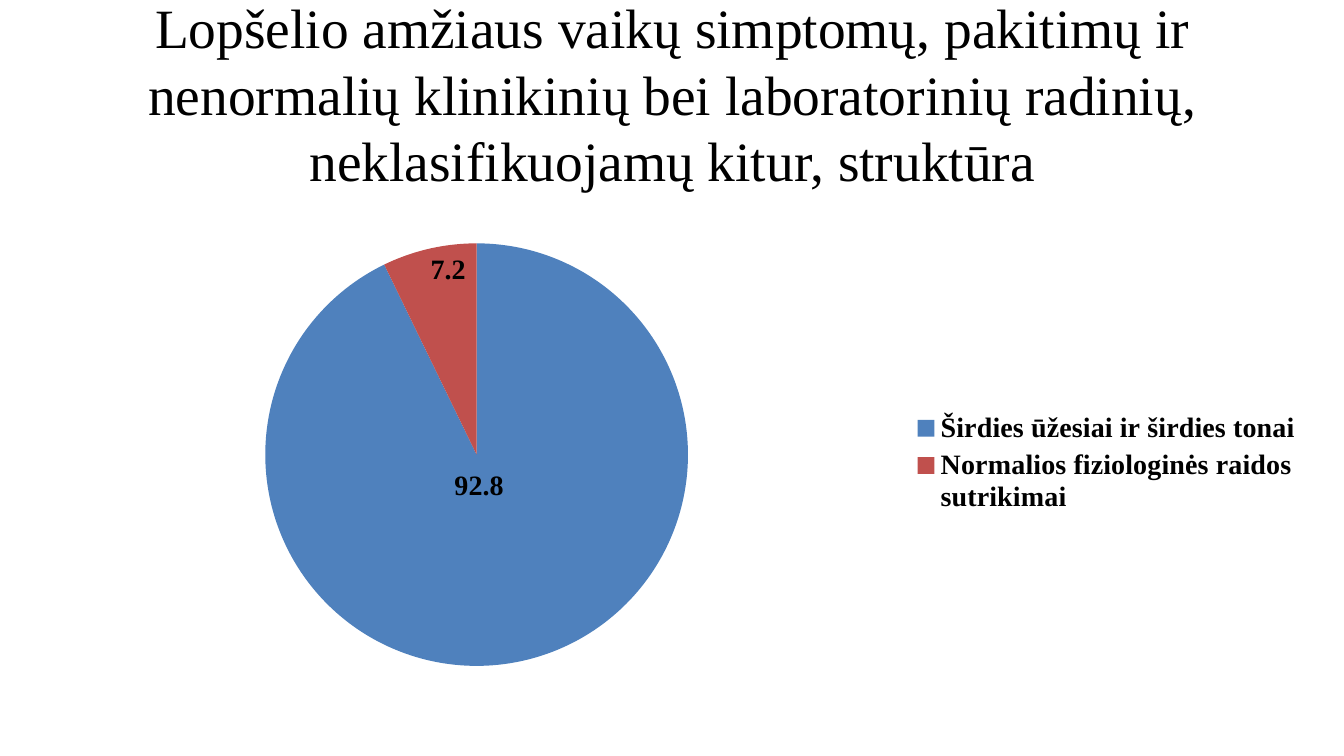
from dataclasses import dataclass

from lxml.etree import SubElement
from pptx import Presentation
from pptx.chart.data import CategoryChartData
from pptx.dml.color import RGBColor
from pptx.enum.chart import XL_CHART_TYPE as ChartType
from pptx.enum.chart import XL_LABEL_POSITION as LabelPos
from pptx.enum.chart import XL_LEGEND_POSITION as LegendPos
from pptx.enum.text import MSO_ANCHOR, MSO_AUTO_SIZE, PP_ALIGN
from pptx.oxml.ns import qn
from pptx.util import Inches, Pt

COLORS = {"text": "000000", "murmurs": "4F81BD", "development": "C0504D"}
SERIF = "Times New Roman"
TITLE = (
    "Lopšelio amžiaus vaikų simptomų, pakitimų ir nenormalių klinikinių "
    "bei laboratorinių radinių, neklasifikuojamų kitur, struktūra"
)


@dataclass
class Slice:
    name: str
    value: float
    color: str


SLICES = [
    Slice("Širdies ūžesiai ir širdies tonai", 92.8, "murmurs"),
    Slice("Normalios fiziologinės raidos sutrikimai", 7.2, "development"),
]


def rgb(name: str) -> RGBColor:
    return RGBColor.from_string(COLORS[name])


def style_font(font, size: float, name: str = SERIF, bold: bool = False) -> None:
    font.name = name
    font.size = Pt(size)
    font.bold = bold
    font.color.rgb = rgb("text")


def set_layout(layout, **settings) -> None:
    for child in list(layout):
        layout.remove(child)
    manual = SubElement(layout, qn("c:manualLayout"))
    for tag, value in settings.items():
        SubElement(manual, qn(f"c:{tag}")).set("val", str(value))


def add_title(s) -> None:
    sp = s.shapes.title
    sp.left, sp.top = Inches(0.67), Inches(0.3)
    sp.width, sp.height = Inches(12), Inches(1.25)
    tf = sp.text_frame
    tf.text = TITLE
    tf.word_wrap = True
    tf.auto_size = MSO_AUTO_SIZE.NONE
    tf.vertical_anchor = MSO_ANCHOR.MIDDLE
    p = tf.paragraphs[0]
    p.alignment = PP_ALIGN.CENTER
    style_font(p.runs[0].font, 39.6)


def add_pie(s) -> None:
    data = CategoryChartData()
    data.categories = [item.name for item in SLICES]
    data.add_series("Series 1", [item.value for item in SLICES])
    chart = s.shapes.add_chart(
        ChartType.PIE, Inches(0.67), Inches(1.95), Inches(12.35), Inches(5.28), data
    ).chart
    style_font(chart.font, 18, "Calibri")
    chart.has_title = False
    chart.has_legend = True
    chart.legend.position = LegendPos.RIGHT
    chart.legend.include_in_layout = False
    style_font(chart.legend.font, 20, bold=True)

    plot = chart.plots[0]
    plot.vary_by_categories = True
    series = plot.series[0]
    for i, item in enumerate(SLICES):
        fill = series.points[i].format.fill
        fill.solid()
        fill.fore_color.rgb = rgb(item.color)

    labels = series.data_labels
    labels.show_value = True
    labels.position = LabelPos.INSIDE_END
    style_font(labels.font, 20, bold=True)

    label = series.points[0].data_label
    style_font(label.font, 20, bold=True)
    label.position = LabelPos.CENTER
    idx = labels._element.find(qn("c:dLbl")).find(qn("c:idx"))
    layout = SubElement(idx.getparent(), qn("c:layout"))
    idx.addnext(layout)
    set_layout(layout, x=-0.017, y=-0.135)

    area = chart._chartSpace.chart.plotArea
    layout = area.find(qn("c:layout"))
    if layout is None:
        layout = SubElement(area, qn("c:layout"))
        area.insert(0, layout)
    set_layout(
        layout, layoutTarget="inner", xMode="edge", yMode="edge",
        x=0.045, y=0.088, w=0.567, h=0.794,
    )


def main() -> None:
    prs = Presentation()
    prs.slide_width, prs.slide_height = Inches(13.33), Inches(7.5)
    s = prs.slides.add_slide(prs.slide_layouts[5])
    add_title(s)
    add_pie(s)
    prs.save("out.pptx")


if __name__ == "__main__":
    main()
